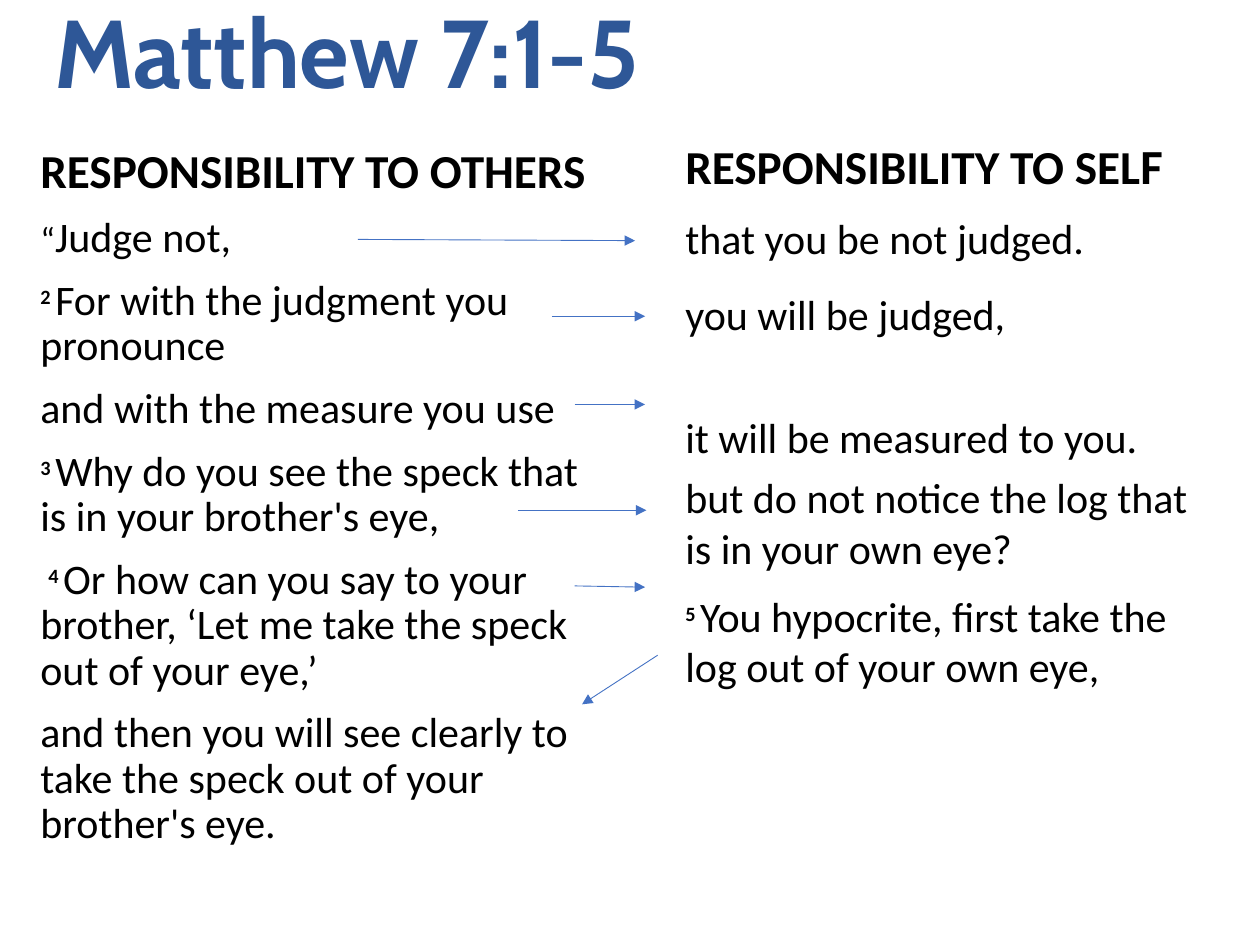
from dataclasses import dataclass

from pptx import Presentation
from pptx.dml.color import RGBColor
from pptx.enum.shapes import MSO_CONNECTOR as Connector
from pptx.enum.text import MSO_ANCHOR as Anchor, MSO_AUTO_SIZE as AutoSize, PP_ALIGN as Align
from pptx.oxml.ns import qn
from pptx.util import Inches, Pt
from lxml.etree import SubElement


@dataclass(frozen=True)
class Theme:
    """Fonts, colours and type sizes of the slide."""
    title_font: str = "Cabin"
    body_font: str = "Calibri"
    title_color: RGBColor = RGBColor(0x2E, 0x57, 0x97)
    text_color: RGBColor = RGBColor(0, 0, 0)
    arrow_color: RGBColor = RGBColor(0x44, 0x72, 0xC4)
    title_size: int = 55
    heading_size: int = 27
    last_letter_size: int = 28
    body_size: int = 24
    small_size: int = 20
    arrow_width: float = 0.5


THEME = Theme()

STYLES = {
    "heading": (THEME.heading_size, True),
    "last letter": (THEME.last_letter_size, True),
    "body": (THEME.body_size, False),
    "small": (THEME.small_size, False),
    "verse": (THEME.small_size, True),
}

OTHERS = [
    (0, [("heading", "RESPONSIBILITY TO OTHERS")]),
    (10, [("small", "“"), ("body", "Judge not,")]),
    (10, [("verse", "2 "), ("body", "For with the judgment you pronounce")]),
    (10, [("body", "and with the measure you use")]),
    (10, [("verse", "3 "),
          ("body", "Why do you see the speck that is in your brother's eye,")]),
    (10, [("small", " "), ("verse", "4 "),
          ("body", "Or how can you say to your brother, "
                   "‘Let me take the speck out of your eye,’")]),
    (10, [("body", "and then you will see clearly to take the speck "
                   "out of your brother's eye.")]),
]

SELF = [
    (0, [("heading", "RESPONSIBILITY TO SEL"), ("last letter", "F")]),
    (10, [("body", "that you be not judged.")]),
    (15, [("body", "you will be judged,")]),
    (41, [("body", "it will be measured to you.")]),
    (6, [("body", "but do not notice the log that is in your own eye?")]),
    (10, [("verse", "5 "),
          ("body", "You hypocrite, first take the log out of your own eye,")]),
]

ARROWS = [
    (2.84, 1.9, 5.04, 1.91),
    (4.38, 2.51, 5.12, 2.51),
    (4.56, 3.21, 5.12, 3.21),
    (4.11, 4.05, 5.13, 4.05),
    (5.22, 5.2, 4.62, 5.59),
    (4.56, 4.65, 5.12, 4.66),
]


def place(shape, box):
    """Move a shape to a box of left, top, width and height in inches."""
    shape.left, shape.top, shape.width, shape.height = map(Inches, box)


def fill_title(shape, box, text):
    """Write the slide title in its placeholder."""
    place(shape, box)
    frame = shape.text_frame
    frame.text = text
    frame.auto_size = AutoSize.NONE
    frame.vertical_anchor = Anchor.MIDDLE
    paragraph = frame.paragraphs[0]
    paragraph.alignment = Align.LEFT
    paragraph.line_spacing = 0.9
    font = paragraph.font
    font.name, font.size, font.bold = THEME.title_font, Pt(THEME.title_size), True
    font.color.rgb = THEME.title_color


def fill_column(shape, box, passages, line_spacing):
    """Write a heading and its verses as unbulleted paragraphs."""
    place(shape, box)
    frame = shape.text_frame
    frame.word_wrap = True
    frame.auto_size = AutoSize.NONE
    for number, (space_before, pieces) in enumerate(passages):
        paragraph = frame.add_paragraph() if number else frame.paragraphs[0]
        properties = paragraph._p.get_or_add_pPr()
        properties.set("marL", "0")
        properties.set("indent", "0")
        SubElement(properties, qn("a:buNone"))
        paragraph.space_before = Pt(space_before)
        paragraph.line_spacing = line_spacing
        paragraph.font.name = THEME.body_font
        paragraph.font.color.rgb = THEME.text_color
        for style, text in pieces:
            run = paragraph.add_run()
            run.text = text
            size, run.font.bold = STYLES[style]
            run.font.size = Pt(size)
            if style == "verse":
                run._r.get_or_add_rPr().set("baseline", "30000")


def add_arrow(slide, ends):
    """Draw a thin arrow between two points in inches."""
    arrow = slide.shapes.add_connector(Connector.STRAIGHT, *map(Inches, ends))
    arrow.line.color.rgb = THEME.arrow_color
    arrow.line.width = Pt(THEME.arrow_width)
    SubElement(arrow.line._get_or_add_ln(), qn("a:tailEnd"), type="triangle")
    SubElement(arrow._element.spPr, qn("a:effectLst"))


def main():
    """Build the slide and save it."""
    presentation = Presentation()
    presentation.slide_width, presentation.slide_height = Inches(10), Inches(7.5)
    slide = presentation.slides.add_slide(presentation.slide_layouts[1])
    fill_title(slide.shapes.title, (0.33, -0.12, 9.6, 1.15), "Matthew 7:1-5")
    fill_column(slide.placeholders[1], (0.22, 1.12, 4.63, 6.18), OTHERS, 0.9)
    self_box = (5.34, 1.03, 4.45, 4.74)
    self_column = slide.shapes.add_textbox(*map(Inches, self_box))
    fill_column(self_column, self_box, SELF, 1.0)
    for ends in ARROWS:
        add_arrow(slide, ends)
    presentation.save("out.pptx")


if __name__ == "__main__":
    main()
